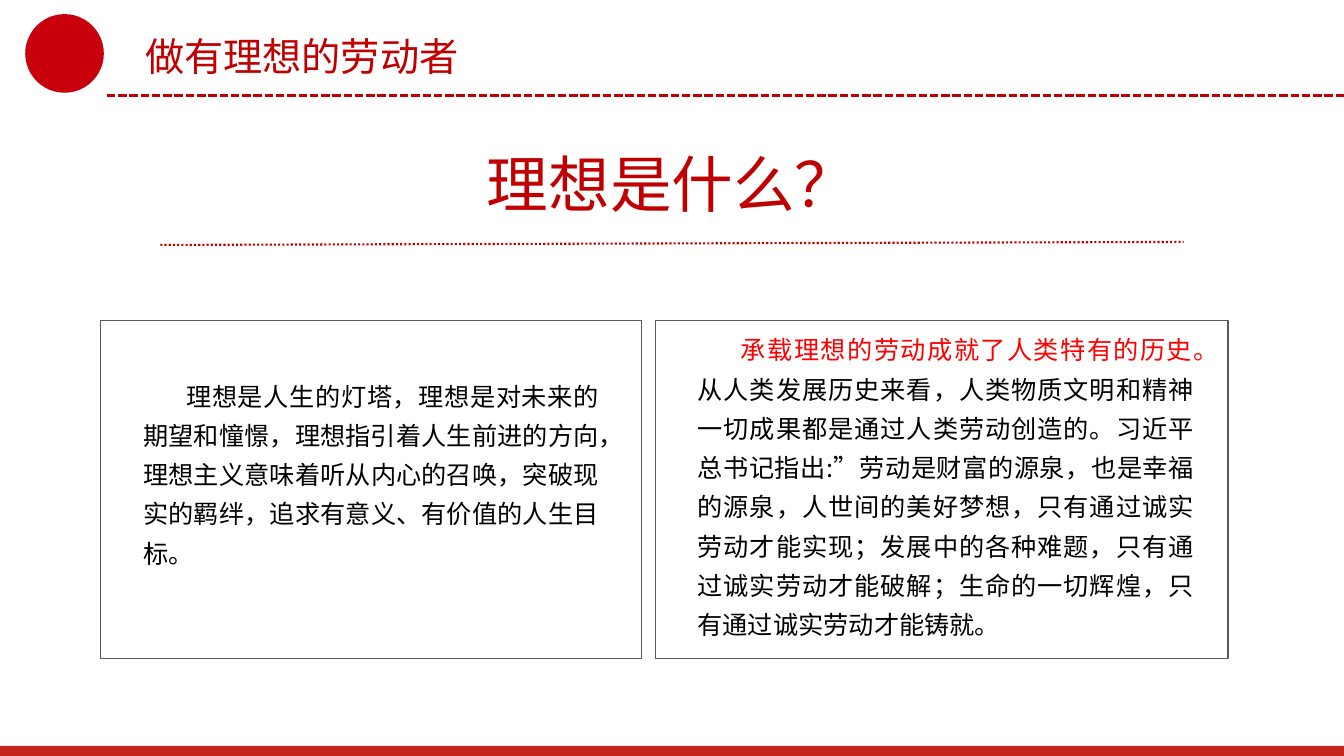
from lxml import etree
from pptx import Presentation
from pptx.dml.color import RGBColor
from pptx.enum.dml import MSO_LINE
from pptx.enum.shapes import MSO_CONNECTOR, MSO_SHAPE
from pptx.enum.text import MSO_ANCHOR, MSO_AUTO_SIZE, PP_ALIGN
from pptx.oxml.ns import qn
from pptx.util import Inches, Pt

STRAIGHT = MSO_CONNECTOR.STRAIGHT
RECT, OVAL = MSO_SHAPE.RECTANGLE, MSO_SHAPE.OVAL
DASH, DOT = MSO_LINE.SQUARE_DOT, MSO_LINE.ROUND_DOT
LEFT, CENTER, JUSTIFY = PP_ALIGN.LEFT, PP_ALIGN.CENTER, PP_ALIGN.JUSTIFY
TOP, NO_FIT = MSO_ANCHOR.TOP, MSO_AUTO_SIZE.NONE

FONT = "Noto Sans CJK SC"
COLORS = {"emblem": "C7000B", "title": "C00000", "footer": "C4261D",
          "border": "595959", "text": "000000", "accent": "FF0000"}
SLIDE_W, SLIDE_H = 13.33, 7.5

IDEAL = [("理想是人生的灯塔，理想是对未来的期望和憧憬，理想指引着人生前进的方向，"
          "理想主义意味着听从内心的召唤，突破现实的羁绊，追求有意义、有价值的人生目标。", "text")]
LABOUR = [("承载理想的劳动成就了人类特有的历史。", "accent"),
          ("从人类发展历史来看，人类物质文明和精神一切成果都是通过人类劳动创造的。"
           "习近平总书记指出:”劳动是财富的源泉，也是幸福的源泉，人世间的美好梦想，"
           "只有通过诚实劳动才能实现；发展中的各种难题，只有通过诚实劳动才能破解；"
           "生命的一切辉煌，只有通过诚实劳动才能铸就。", "text")]


def color(name):
    return RGBColor.from_string(COLORS[name])


def format_run(r, size, name):
    r.font.size = Pt(size)
    r.font.name = FONT
    r.font.color.rgb = color(name)
    rPr = r.font._element
    rPr.set("lang", "zh-CN")
    etree.SubElement(rPr, qn("a:ea")).set("typeface", FONT)


def add_solid(s, kind, x, y, w, h, name):
    sp = s.shapes.add_shape(kind, Inches(x), Inches(y), Inches(w), Inches(h))
    sp.shadow.inherit = False
    sp.fill.solid()
    sp.fill.fore_color.rgb = color(name)
    sp.line.fill.background()


def add_rule(s, x1, y1, x2, y2, width, dash):
    line = s.shapes.add_connector(STRAIGHT, Inches(x1), Inches(y1), Inches(x2), Inches(y2))
    line.line.color.rgb = color("title")
    line.line.width = Pt(width)
    line.line.dash_style = dash
    etree.SubElement(line._element.spPr, qn("a:effectLst"))


def fill_heading(sp, text, size, align):
    tf = sp.text_frame
    tf.text = text
    tf.word_wrap = False
    tf.auto_size = NO_FIT
    tf.vertical_anchor = TOP
    p = tf.paragraphs[0]
    p.alignment = align
    format_run(p.runs[0], size, "title")


def header(s, x, y, w, h):
    add_solid(s, OVAL, x + 0.25, y + 0.14, 0.78, 0.78, "emblem")
    add_rule(s, x + 1.06, y + h, x + w, y + h, 2, DASH)
    title = s.shapes.title
    title.left, title.top = Inches(x + 1.34), Inches(y + 0.27)
    title.width, title.height = Inches(3.31), Inches(0.57)
    fill_heading(title, "做有理想的劳动者", 28, LEFT)


def question(s, x, y, w, h):
    box_w = 3.87
    sp = s.shapes.add_textbox(Inches(x + (w - box_w) / 2), Inches(y), Inches(box_w), Inches(0.84))
    fill_heading(sp, "理想是什么？", 44, CENTER)
    add_rule(s, x, y + h, x + w, y + h - 0.03, 1.5, DOT)


def panel(s, x, y, w, h, parts, text_w, text_dy):
    frame = s.shapes.add_shape(RECT, Inches(x), Inches(y), Inches(w), Inches(h))
    frame.shadow.inherit = False
    frame.fill.background()
    frame.line.color.rgb = color("border")
    frame.line.width = Pt(0.75)
    sp = s.shapes.add_textbox(Inches(x + 0.32), Inches(y + text_dy),
                              Inches(text_w), Inches(h - 2 * text_dy))
    tf = sp.text_frame
    tf.word_wrap = True
    p = tf.paragraphs[0]
    p.alignment = JUSTIFY
    p.line_spacing = 1.3
    p._p.get_or_add_pPr().set("indent", str(Inches(0.43)))
    for text, name in parts:
        r = p.add_run()
        r.text = text
        format_run(r, 18, name)


def main():
    prs = Presentation()
    prs.slide_width, prs.slide_height = Inches(SLIDE_W), Inches(SLIDE_H)
    s = prs.slides.add_slide(prs.slide_layouts[5])
    header(s, 0, 0, SLIDE_W, 0.95)
    add_solid(s, RECT, 0, SLIDE_H - 0.1, SLIDE_W, 0.1, "footer")
    question(s, 1.59, 1.4, 10.15, 1.03)
    panel(s, 1, 3.18, 5.36, 3.35, IDEAL, 4.72, 0.46)
    panel(s, 6.5, 3.18, 5.68, 3.35, LABOUR, 5.12, 0)
    prs.save("out.pptx")


if __name__ == "__main__":
    main()
